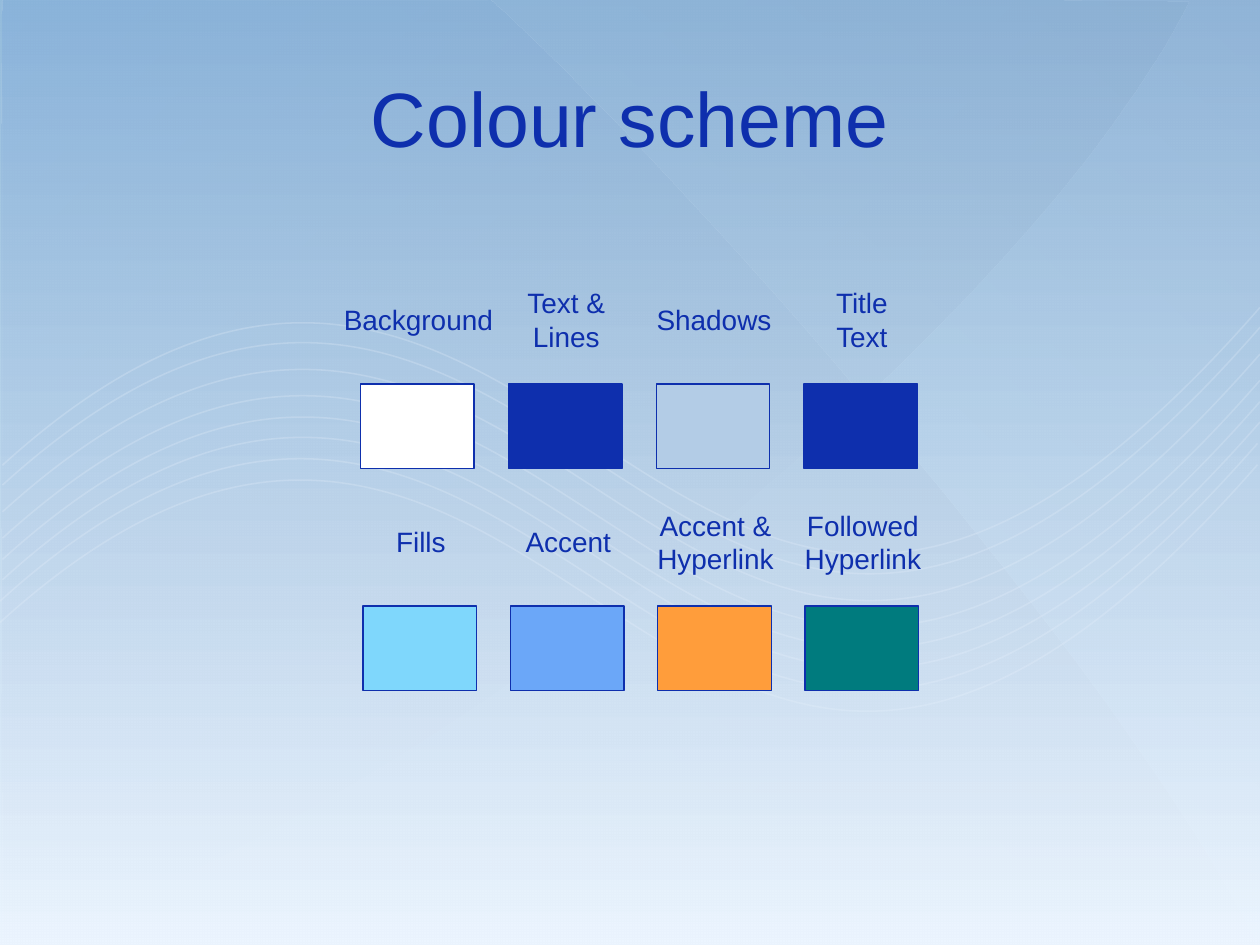
from lxml.etree import SubElement
from pptx import Presentation
from pptx.dml.color import RGBColor
from pptx.enum.shapes import MSO_SHAPE
from pptx.enum.text import MSO_ANCHOR, PP_ALIGN
from pptx.oxml.ns import qn
from pptx.util import Cm, Pt

NAVY = RGBColor(0x0E, 0x2F, 0xAD)
WHITE = RGBColor(0xFF, 0xFF, 0xFF)
MIST = RGBColor(0xB3, 0xCC, 0xE6)
SKY = RGBColor(0x7F, 0xD7, 0xFC)
CORNFLOWER = RGBColor(0x6B, 0xA7, 0xF8)
ORANGE = RGBColor(0xFF, 0x9D, 0x3B)
TEAL = RGBColor(0x00, 0x7B, 0x7E)
LAGOON = RGBColor(0x38, 0x9F, 0xC9)
OCEAN = RGBColor(0x21, 0x68, 0xA9)
COBALT = RGBColor(0x00, 0x60, 0xB6)
DEEP_BLUE = RGBColor(0x00, 0x37, 0x67)
PALE = RGBColor(0xEC, 0xF5, 0xFF)

SLIDE_W, SLIDE_H = 25.4, 19.05

# Each outline in cm: the start, then a row of (control, control, end) per curve
LEFT_SWEEP = [(23.95, 0.03),
              (20.83, 6.3), (9.07, 16.15), (0.03, 19.15),
              (0, 15.77), (0.08, 5.31), (0.03, 0.03),
              (4.75, 0.03), (20.09, 0), (23.95, 0.03)]
DIAGONAL_SWEEP = [(0.05, -0.03),
                  (1.78, -0.03), (5.87, -0.1), (9.83, -0.05),
                  (13.44, 3.18), (22.61, 13.44), (25.37, 19.1),
                  (22.25, 19.13), (4.98, 19.08), (0.05, 19.08),
                  (0.05, 13.92), (0, 4.17), (0.05, -0.03)]
WAVE = [(0.05, 5.21),
        (5.79, 0), (9.32, 3.05), (12.78, 5.23),
        (16.26, 7.44), (19.58, 8.69), (25.4, 2.03)]
WAVE_OFFSETS = [(0, 4.17), (0, 4.57), (0, 5.11), (0, 5.64),
                (0, 6.07), (0, 6.48), (-0.05, 6.91), (-0.05, 7.34)]

SWATCH_W, SWATCH_H = 2.29, 1.7
LABEL_RISE = 1.3  # from the top of a swatch up to the middle of its label
LABEL_SHIFT = 0.02
LINE_H, LABEL_PAD = 0.69, 0.25

# Each row: left, top, pitch, then (label, label width, fill)
ROWS = [
    (7.27, 7.74, 2.98,
     [("Background", 3.53, WHITE), ("Text &\nLines", 2.13, NAVY),
      ("Shadows", 2.84, MIST), ("Title\vText", 1.6, NAVY)]),
    (7.32, 12.22, 2.97,
     [("Fills", 1.52, SKY), ("Accent", 2.24, CORNFLOWER),
      ("Accent &\nHyperlink", 2.87, ORANGE),
      ("Followed\nHyperlink", 2.87, TEAL)]),
]


def set_alpha(color_element, percent):
    SubElement(color_element, qn("a:alpha"), val=str(percent * 1000))


def fill_gradient(sp, stops, angle):
    """Fill with two (colour, opacity) stops; the angle runs counter-clockwise."""
    sp.fill.gradient()
    sp.fill.gradient_angle = angle
    for stop, (color, _) in zip(sp.fill.gradient_stops, stops):
        stop.color.rgb = color
    colors = list(sp.element.spPr.iter(qn("a:srgbClr")))
    for element, (_, opacity) in zip(colors, stops):
        if opacity < 100:
            set_alpha(element, opacity)
    sp.line.fill.background()


def add_curve(s, outline, close, dx=0, dy=0):
    """Build the outline, then merge every three segments into a cubic curve."""
    points = [(Cm(x + dx), Cm(y + dy)) for x, y in outline]
    builder = s.shapes.build_freeform(*points[0])
    builder.add_line_segments(points[1:], close=close)
    sp = builder.convert_to_shape()
    sp.shadow.inherit = False
    segments = list(sp.element.iter(qn("a:lnTo")))
    for trio in zip(segments[::3], segments[1::3], segments[2::3]):
        parent = trio[0].getparent()
        curve = SubElement(parent, qn("a:cubicBezTo"))
        trio[0].addprevious(curve)
        for segment in trio:
            curve.append(segment[0])
            parent.remove(segment)
    return sp


def add_sweep(s, outline, stops):
    fill_gradient(add_curve(s, outline, True), stops, 315)


def add_wave(s, dx, dy):
    sp = add_curve(s, WAVE, False, dx, dy)
    sp.fill.background()
    sp.line.color.rgb = WHITE
    sp.line.width = Pt(0.88)
    set_alpha(next(sp.element.spPr.iter(qn("a:srgbClr"))), 41)


def add_rect(s, x, y, w, h):
    sp = s.shapes.add_shape(MSO_SHAPE.RECTANGLE, Cm(x), Cm(y), Cm(w), Cm(h))
    sp.shadow.inherit = False
    return sp


def add_wash(s, stops, angle):
    """Cover the whole slide with a gradient."""
    fill_gradient(add_rect(s, 0, 0, SLIDE_W, SLIDE_H), stops, angle)


def add_swatch(s, x, y, color):
    sp = add_rect(s, x, y, SWATCH_W, SWATCH_H)
    sp.fill.solid()
    sp.fill.fore_color.rgb = color
    sp.line.color.rgb = NAVY
    sp.line.width = Pt(0.75)


def add_text(s, text, x, y, w, h, size, wrap):
    tf = s.shapes.add_textbox(Cm(x), Cm(y), Cm(w), Cm(h)).text_frame
    tf.word_wrap = wrap
    tf.vertical_anchor = MSO_ANCHOR.MIDDLE
    tf.text = text
    font_format = {"name": "Arial", "size": Pt(size)}
    for p in tf.paragraphs:
        p.alignment = PP_ALIGN.CENTER
        for r in p.runs:
            for name, value in font_format.items():
                setattr(r.font, name, value)
            r.font.color.rgb = NAVY


def add_label(s, text, center_x, center_y, w):
    h = LABEL_PAD + LINE_H * len(text.splitlines())
    add_text(s, text, center_x - w / 2, center_y - h / 2, w, h, 16, False)


def add_backdrop(s):
    add_wash(s, [(LAGOON, 100), (OCEAN, 100)], 45)
    add_sweep(s, LEFT_SWEEP, [(COBALT, 41), (DEEP_BLUE, 47)])
    add_sweep(s, DIAGONAL_SWEEP, [(COBALT, 72), (DEEP_BLUE, 47)])
    for dx, dy in WAVE_OFFSETS:
        add_wave(s, dx, dy)
    add_wash(s, [(MIST, 77), (PALE, 100)], 270)


def main():
    prs = Presentation()
    prs.slide_width, prs.slide_height = Cm(SLIDE_W), Cm(SLIDE_H)
    s = prs.slides.add_slide(prs.slide_layouts[6])
    add_backdrop(s)
    add_text(s, "Colour scheme", 1.27, 0.76, 22.86, 3.18, 44, True)
    for left, top, pitch, swatches in ROWS:
        for i, (label, label_w, color) in enumerate(swatches):
            x = left + i * pitch
            add_swatch(s, x, top, color)
            add_label(s, label, x + SWATCH_W / 2 + LABEL_SHIFT,
                      top - LABEL_RISE, label_w)
    prs.save("out.pptx")


if __name__ == "__main__":
    main()
